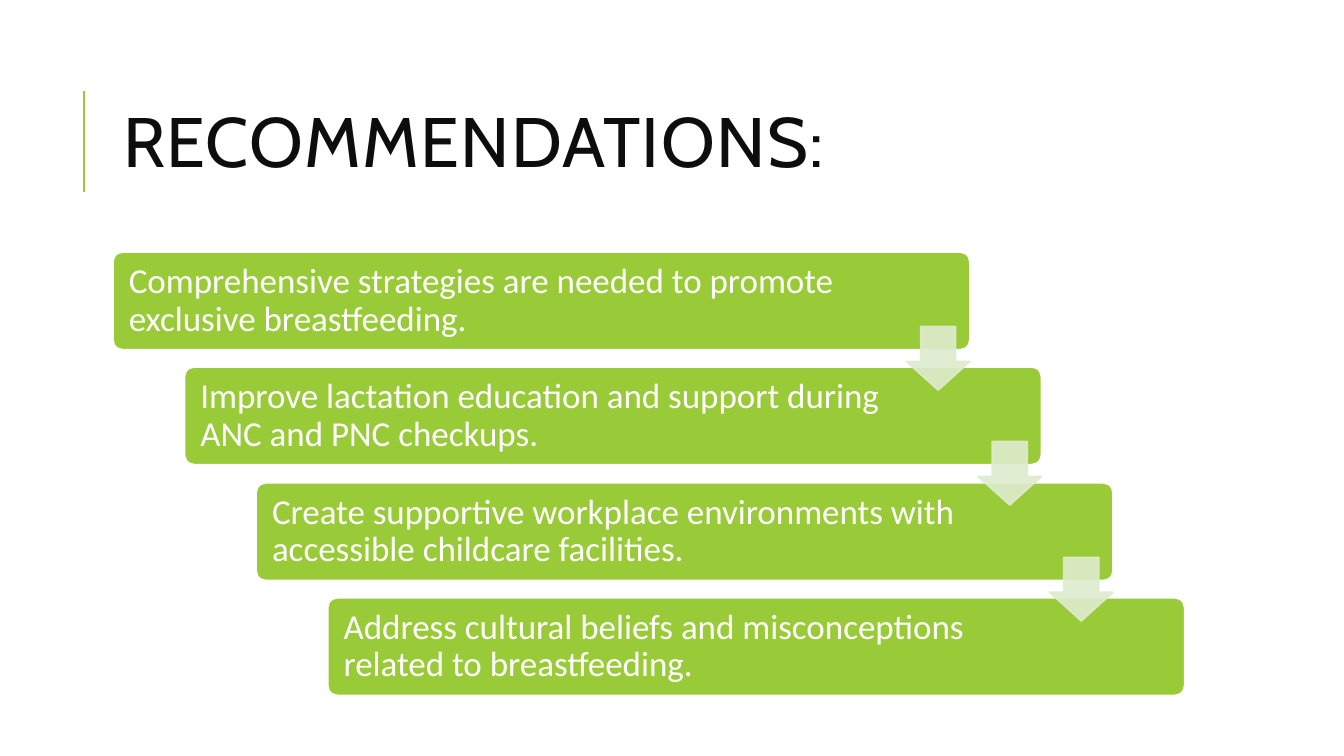
from dataclasses import dataclass

from lxml.etree import SubElement
from pptx import Presentation
from pptx.dml.color import RGBColor
from pptx.enum.shapes import MSO_CONNECTOR, MSO_SHAPE
from pptx.enum.text import MSO_ANCHOR, MSO_AUTO_SIZE, PP_ALIGN
from pptx.oxml.ns import qn
from pptx.util import Emu, Pt

COLORS = {"green": "99CB38", "pale": "DEECCE", "white": "FFFFFF", "ink": "0D0D0D"}
STEP_LEFT, STEP_TOP, STEP_W, STEP_H = 112, 250, 850, 97
SHIFT_X, SHIFT_Y = 71, 114.4
ARROW_DX, ARROW_DY, ARROW_SIZE = 787, 74, 63
INSET = 13


@dataclass
class Step:
    text: str
    right_inset: int


STEPS = [
    Step("Comprehensive strategies are needed to promote exclusive breastfeeding.", 119),
    Step("Improve lactation education and support during ANC and PNC checkups.", 146),
    Step("Create supportive workplace environments with accessible childcare facilities.", 146),
    Step("Address cultural beliefs and misconceptions related to breastfeeding.", 146),
]


def px(n: int) -> Emu:
    return Emu(n * 9144)


def rgb(name: str) -> RGBColor:
    return RGBColor.from_string(COLORS[name])


def step_origin(index: int) -> tuple[int, int]:
    return STEP_LEFT + SHIFT_X * index, STEP_TOP + round(SHIFT_Y * index)


def format_text(tf, font: str, size: int, color: str, spacing: float) -> None:
    tf.word_wrap = True
    tf.auto_size = MSO_AUTO_SIZE.NONE
    tf.vertical_anchor = MSO_ANCHOR.MIDDLE
    p = tf.paragraphs[0]
    p.alignment = PP_ALIGN.LEFT
    p.line_spacing = spacing
    r = p.runs[0]
    r.font.name = font
    r.font.size = Pt(size)
    r.font.color.rgb = rgb(color)


def add_block(slide, kind, box: tuple[int, int, int, int], fill: str, line: str):
    sp = slide.shapes.add_shape(kind, *map(px, box))
    sp.shadow.inherit = False
    sp.fill.solid()
    sp.fill.fore_color.rgb = rgb(fill)
    sp.line.color.rgb = rgb(line)
    sp.line.width = Pt(1.25)
    return sp


def add_title(slide, text: str) -> None:
    sp = slide.shapes.title
    sp.left, sp.top, sp.width, sp.height = map(px, (112, 64, 1063, 164))
    sp.text_frame.text = text
    format_text(sp.text_frame, "Cabin", 50, "ink", 0.8)
    sp.text_frame.paragraphs[0].runs[0].font._element.set("spc", "100")


def add_accent(slide) -> None:
    line = slide.shapes.add_connector(MSO_CONNECTOR.STRAIGHT, px(83), px(190), px(83), px(90))
    line.line.color.rgb = rgb("green")
    line.line.width = Pt(1.5)
    SubElement(line._element.spPr, qn("a:effectLst"))


def add_step(slide, index: int, step: Step) -> None:
    x, y = step_origin(index)
    sp = add_block(slide, MSO_SHAPE.ROUNDED_RECTANGLE, (x, y, STEP_W, STEP_H), "green", "white")
    sp.adjustments[0] = 0.1
    tf = sp.text_frame
    tf.text = step.text
    tf.margin_left = tf.margin_top = tf.margin_bottom = px(INSET)
    tf.margin_right = px(step.right_inset)
    format_text(tf, "Calibri", 25, "white", 0.9)


def add_arrow(slide, index: int) -> None:
    x, y = step_origin(index)
    box = (x + ARROW_DX, y + ARROW_DY, ARROW_SIZE, ARROW_SIZE)
    sp = add_block(slide, MSO_SHAPE.DOWN_ARROW, box, "pale", "pale")
    sp.adjustments[0] = 0.55
    sp.adjustments[1] = 0.45
    for color in sp._element.spPr.iter(qn("a:srgbClr")):
        SubElement(color, qn("a:alpha"), val="90000")


def main() -> None:
    prs = Presentation()
    prs.slide_width, prs.slide_height = px(1333), px(750)
    slide = prs.slides.add_slide(prs.slide_layouts[5])
    add_accent(slide)
    add_title(slide, "RECOMMENDATIONS:")
    for i, step in enumerate(STEPS):
        add_step(slide, i, step)
    for i in range(len(STEPS) - 1):
        add_arrow(slide, i)
    prs.save("out.pptx")


if __name__ == "__main__":
    main()
